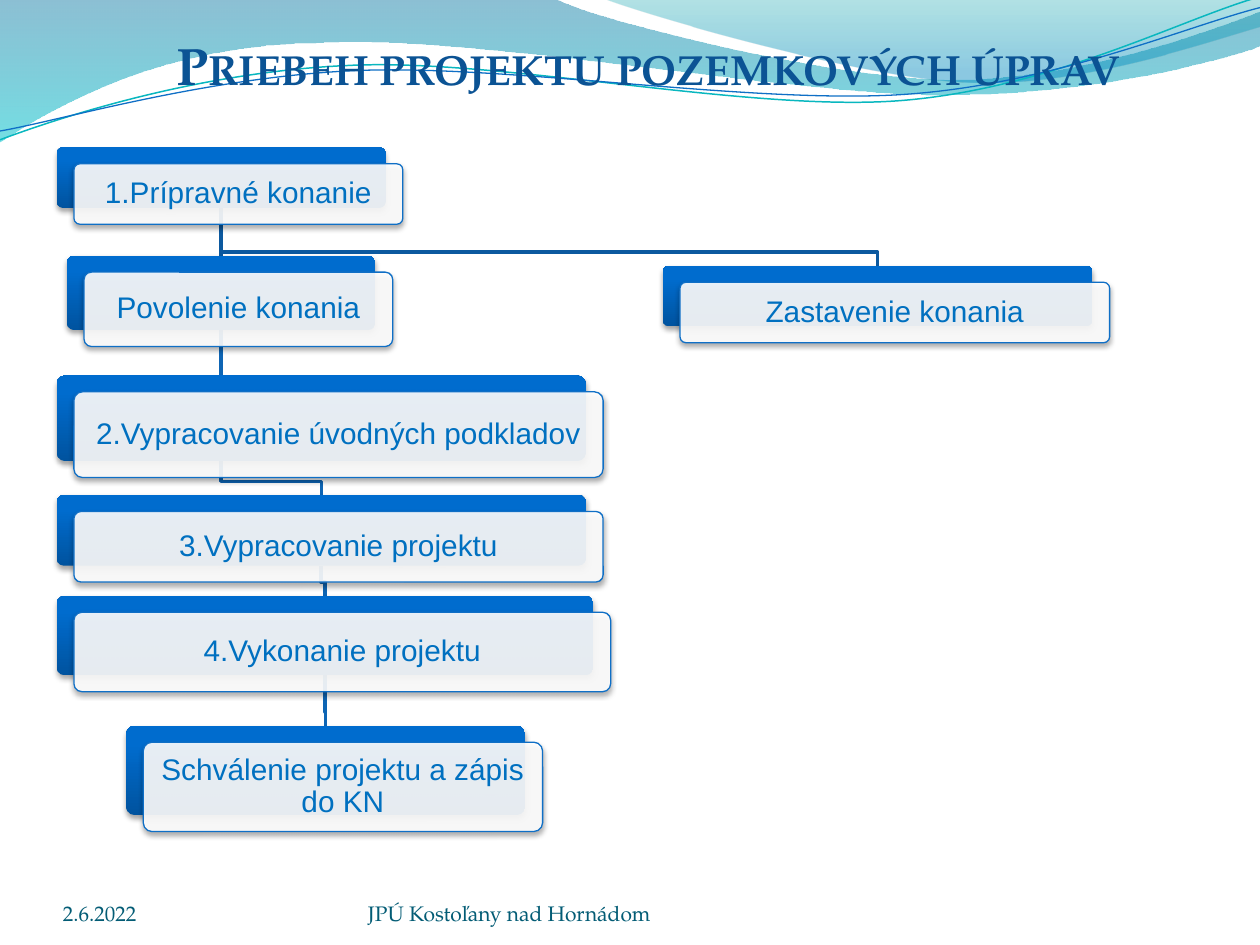
from math import cos, radians, sin

from lxml.etree import SubElement
from pptx import Presentation
from pptx.dml.color import RGBColor
from pptx.enum.shapes import MSO_SHAPE
from pptx.enum.text import MSO_ANCHOR, MSO_AUTO_SIZE, PP_ALIGN
from pptx.oxml import parse_xml
from pptx.oxml.ns import nsdecls, qn
from pptx.util import Inches, Pt

HUES = {
    "title": "0B5394", "foot": "035C75", "text": "0070C0",
    "edge": "0F6FC6", "teal": "09B7BF", "white": "FFFFFF", "shade": "000000",
    "link": "0C599F", "deep": "0E65B4",
}
# Gradient stops: position, colour, opacity
FADES = {
    "left": [(0, "0074A0", 45), (100, "00C4CD", 55)],
    "right": [(20, "008ABF", 45), (100, "00A0A8", 30)],
    "card": [(0, "00539F", 100), (80, "006CCE", 100), (100, "006DCF", 100)],
}
SERIF, SANS = "TeX Gyre Pagella", "Arial"
TILT = 357.3

# Each outline: its frame, then a start point, lines (2 numbers) and curves (6 numbers)
BANDS = [
    ("left", 90, (-0.1, -0.1, 100.2, 11.4),
     [(0, 0), (44, -0.1), (47.6, 1.7, 66.4, 6.3, 75.8, 6.3),
      (85.3, 6.3, 95.8, 2.6, 100, 0.9), (100.1, 3.6),
      (98.3, 4.4, 87, 7.6, 74.6, 7.5), (62.2, 7.5, 38.2, 2.8, 25.7, 3.4),
      (12.9, 3.5, 4.6, 8.3, -0.1, 11.3), (0, 0)]),
    ("right", 270, (47.9, -0.1, 52.1, 7),
     [(47.9, -0.1), (50.9, 1.1, 68.2, 6.2, 76.9, 6.5),
      (85.6, 6.9, 96.1, 3.2, 100, 2.1), (100, 0), (47.9, -0.1)]),
]
WAVES = [
    ("teal", 0.85, (-0.2, 2.2, 100.2, 7.1),
     [(0, 11.1), (4.8, 9.3, 15.8, 5.7, 27.7, 5.2),
      (39.5, 4.6, 59.3, 8.9, 71.3, 8), (83.3, 7.1, 93.8, 1.5, 99.8, -0.2)]),
    ("edge", 0.75, (-0.2, 3, 100.3, 5.8),
     [(0, 10.4), (4.7, 9.6, 16.4, 6.1, 28.3, 5.6),
      (40.3, 5.1, 59.7, 8.3, 71.7, 7.5), (83.6, 6.7, 94.1, 2.1, 100, 0.6)]),
]

# Cards: left, top, width, height in cells of the flow box
CARDS = {
    "prep": ("1.Prípravné konanie", 0, 0, 26.1, 4.8),
    "stop": ("Zastavenie konania", 48.1, 9.4, 34.1, 4.8),
    "allow": ("Povolenie konania", 0.8, 8.6, 24.5, 5.9),
    "plan": ("3.Vypracovanie projektu", 0, 27.6, 42, 5.6),
    "work": ("4.Vykonanie projektu", 0, 35.6, 42.6, 6.3),
    "seal": ("Schválenie projektu a zápis do KN", 5.5, 45.9, 31.7, 7.1),
    "base": ("2.Vypracovanie úvodných podkladov", 0, 18.1, 42, 6.8),
}
LINKS = [("work", "seal", "deep"), ("plan", "work", "deep"), ("allow", "plan", "deep"),
         ("prep", "allow", "link"), ("prep", "stop", "link")]


def cell(n):
    """The slide is a grid of 100 columns by 75 rows."""
    return Inches(n / 10)


def hue(name):
    return RGBColor.from_string(HUES[name])


def fade(shape, name, angle):
    shape.fill.gradient()
    old = shape.element.spPr.find(qn("a:gradFill"))
    stops = "".join(
        f'<a:gs pos="{at * 1000}"><a:srgbClr val="{tint}">'
        f'<a:alpha val="{part * 1000}"/></a:srgbClr></a:gs>'
        for at, tint, part in FADES[name])
    old.getparent().replace(old, parse_xml(
        f'<a:gradFill {nsdecls("a")} rotWithShape="1"><a:gsLst>{stops}</a:gsLst>'
        f'<a:lin ang="{angle * 60000}" scaled="0"/></a:gradFill>'))


def shade(shape):
    shape.shadow.inherit = False
    shape.element.spPr.find(qn("a:effectLst")).append(parse_xml(
        f'<a:outerShdw {nsdecls("a")} blurRad="{Pt(3.1)}" dist="{Pt(1.8)}" dir="5400000" '
        f'rotWithShape="0"><a:srgbClr val="{HUES["shade"]}"><a:alpha val="35000"/>'
        f'</a:srgbClr></a:outerShdw>'))


def stroke(shape, name, width):
    shape.line.color.rgb = hue(name)
    shape.line.width = Pt(width)


def style(frame, font, size, name, inset=(0, 0)):
    frame.word_wrap = True
    frame.margin_left = frame.margin_right = cell(inset[0])
    frame.margin_top = frame.margin_bottom = cell(inset[1])
    for run in frame.paragraphs[0].runs:
        run.font.name, run.font.size = font, Pt(size)
        run.font.color.rgb = hue(name)


def trace(slide, box, area, route, turn=0, close=False):
    """Draw lines and true curves within an area that may be turned."""
    x, y, w, h = area
    left, top, wide, high = cell(box[0] + x), cell(box[1] + y), cell(w), cell(h)
    pen = slide.shapes.build_freeform(left, top)
    pen.add_line_segments([(left + wide, top + high)], close=False)
    shape = pen.convert_to_shape()
    shape.rotation = turn
    c, s = cos(radians(-turn)), sin(radians(-turn))

    def dot(px, py):
        dx, dy = px - x - w / 2, py - y - h / 2
        u, v = cell(dx * c - dy * s + w / 2), cell(dx * s + dy * c + h / 2)
        return f'<a:pt x="{u}" y="{v}"/>'

    marks = ""
    for i, seg in enumerate(route):
        tag = "moveTo" if i == 0 else "lnTo" if len(seg) == 2 else "cubicBezTo"
        dots = "".join(dot(*seg[k:k + 2]) for k in range(0, len(seg), 2))
        marks += f"<a:{tag}>{dots}</a:{tag}>"
    if close:
        marks += "<a:close/>"
    old = shape.element.spPr.find(".//" + qn("a:pathLst"))
    old.getparent().replace(old, parse_xml(
        f'<a:pathLst {nsdecls("a")}><a:path w="{wide}" h="{high}">{marks}</a:path></a:pathLst>'))
    shape.shadow.inherit = False
    if not close:
        shape.fill.background()
    return shape


def header(slide, box):
    # Coloured bands and thin waves
    for name, angle, area, route in BANDS:
        band = trace(slide, box, area, route, close=True)
        fade(band, name, angle)
        band.line.fill.background()
    for name, width, area, route in WAVES:
        stroke(trace(slide, box, area, route, TILT), name, width)


def heading(slide, box):
    title = slide.shapes.title
    title.left, title.top, title.width, title.height = map(cell, box)
    title.element.getparent().append(title.element)
    frame = title.text_frame
    frame.text = "Priebeh projektu pozemkových úprav"
    frame.auto_size = MSO_AUTO_SIZE.SHAPE_TO_FIT_TEXT
    frame.vertical_anchor = MSO_ANCHOR.TOP
    frame.paragraphs[0].alignment = PP_ALIGN.LEFT
    style(frame, SERIF, 30, "title", (1, 0.5))
    font = frame.paragraphs[0].runs[0].font
    font.bold = True
    frame.paragraphs[0].runs[0]._r.get_or_add_rPr().set("cap", "small")


def card(slide, box, text):
    x, y, w, h = box
    pair = []
    for dx, dy in ((0, 0), (1.37, 1.3)):
        tile = slide.shapes.add_shape(
            MSO_SHAPE.ROUNDED_RECTANGLE, cell(x + dx), cell(y + dy), cell(w), cell(h))
        tile.adjustments[0] = 0.1
        shade(tile)
        pair.append(tile)
    back, front = pair
    fade(back, "card", 270)
    back.line.fill.background()
    front.fill.solid()
    front.fill.fore_color.rgb = hue("white")
    tint = front.element.spPr.find(qn("a:solidFill"))[0]
    SubElement(tint, qn("a:alpha")).set("val", "90000")
    stroke(front, "edge", 0.75)
    frame = front.text_frame
    frame.text = text
    frame.vertical_anchor = MSO_ANCHOR.MIDDLE
    para = frame.paragraphs[0]
    para.alignment = PP_ALIGN.CENTER
    para.line_spacing, para.space_after = 0.9, Pt(6)
    style(frame, SANS, 17, "text", (0.7, 0.7))


def flow(slide, box):
    # Elbow links behind the cards, bending just above the lower one
    for start, end, name in LINKS:
        _, x, y, w, h = CARDS[start]
        _, u, v, span, _ = CARDS[end]
        a, b, foot = x + w / 2, u + span / 2, y + h
        bend = v - 1.1
        area = (a, foot, b - a, v - foot) if b - a > 1 else (a - 0.5, foot, 1, v - foot)
        stroke(trace(slide, box, area, [(a, foot), (a, bend), (b, bend), (b, v)]), name, 2)
    for text, x, y, w, h in CARDS.values():
        card(slide, (box[0] + x, box[1] + y, w, h), text)


def footer(slide, box):
    for text, x, w in (("JPÚ Kostoľany nad Hornádom", 24.2, 36.7), ("2.6.2022", 0, 23.3)):
        note = slide.shapes.add_textbox(cell(box[0] + x), cell(box[1]), cell(w), cell(box[3]))
        note.text_frame.text = text
        note.text_frame.vertical_anchor = MSO_ANCHOR.BOTTOM
        style(note.text_frame, SERIF, 12, "foot")


def main():
    deck = Presentation()
    deck.slide_width, deck.slide_height = cell(100), cell(75)
    slide = deck.slides.add_slide(deck.slide_layouts[5])
    header(slide, (0, 0, 100, 11.4))
    flow(slide, (4.5, 11.7, 83.5, 54.3))
    heading(slide, (13, 2.1, 78, 11))
    footer(slide, (5, 69.5, 60.9, 4))
    deck.save("out.pptx")


if __name__ == "__main__":
    main()
